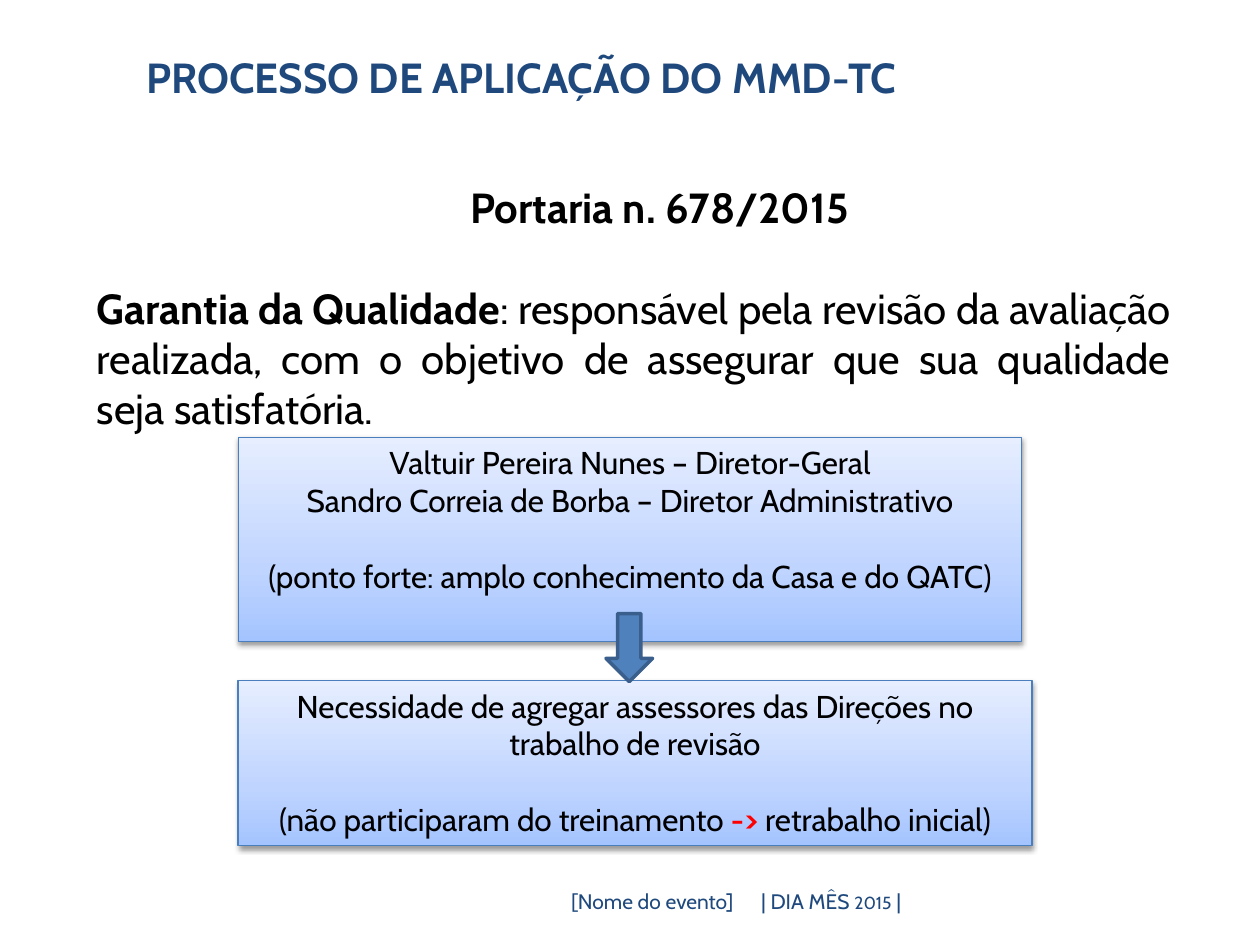
import pptx
import pptx.util
import pptx.dml.color
import pptx.enum.shapes
import pptx.enum.text
import pptx.oxml
import pptx.oxml.ns
from pptx.util import Inches

FONT = "Cabin"
COLORS = {
    "navy": "1F497D",
    "black": "000000",
    "red": "FF0000",
    "box_line": "4B7EBC",
    "arrow": "4F81BD",
    "arrow_line": "3A5F8C",
}
GRADIENT = [(0, "A4C4FF"), (35, "BFD4FF"), (100, "E6EEFF")]
ALIGN = pptx.enum.text.PP_ALIGN
SHAPES = pptx.enum.shapes.MSO_SHAPE
NS = pptx.oxml.ns.nsdecls("a")


def rgb(name):
    return pptx.dml.color.RGBColor.from_string(COLORS[name])


def write(frame, paragraphs, size, color, align, bold=False, gap=0):
    frame.word_wrap = True
    for i, runs in enumerate(paragraphs):
        paragraph = frame.paragraphs[0] if i == 0 else frame.add_paragraph()
        paragraph.alignment = align
        if gap and i == len(paragraphs) - 1:
            paragraph.space_before = pptx.util.Pt(gap)
        paragraph.font.name = FONT
        paragraph.font.size = pptx.util.Pt(size)
        paragraph.font.bold = bold
        paragraph.font.color.rgb = rgb(color)
        for text in runs:
            paragraph.add_run().text = text


deck = pptx.Presentation()
deck.slide_width, deck.slide_height = Inches(10), Inches(7.5)
slide = deck.slides.add_slide(deck.slide_layouts[6])

footers = [
    (5.67, 1.58, ["| DIA MÊS ", "2015", " |"]),
    (0.75, 5.17, ["[Nome do evento]"]),
]
for left, width, runs in footers:
    footer = slide.shapes.add_textbox(Inches(left), Inches(7), Inches(width), Inches(0.3)).text_frame
    footer.vertical_anchor = pptx.enum.text.MSO_ANCHOR.MIDDLE
    write(footer, [runs], 12, "navy", ALIGN.RIGHT)
    if len(runs) > 1:
        footer.paragraphs[0].runs[1].font.size = pptx.util.Pt(10)

ordinance = slide.shapes.add_textbox(Inches(0.67), Inches(1.39), Inches(9.13), Inches(2.1)).text_frame
write(
    ordinance,
    [
        ["Portaria n. 678/2015"],
        [
            "Garantia da Qualidade",
            ": responsável pela revisão da avaliação realizada, com o objetivo "
            "de assegurar que sua qualidade seja satisfatória.",
        ],
    ],
    24, "black", ALIGN.CENTER, bold=True, gap=28.8,
)
definition = ordinance.paragraphs[1]
definition.alignment = ALIGN.JUSTIFY
definition.runs[1].font.bold = False
definition._p.get_or_add_pPr().set("marR", str(Inches(0.41)))

title = slide.shapes.add_textbox(Inches(0.67), Inches(0.36), Inches(7.01), Inches(0.5)).text_frame
write(title, [["PROCESSO DE APLICAÇÃO DO MMD-TC "]], 24, "navy", ALIGN.CENTER, bold=True)

boxes = [
    (3.47, 6.22, 1.62, [
        ["Valtuir Pereira Nunes – Diretor-Geral"],
        ["Sandro Correia de Borba – Diretor Administrativo"],
        ["(ponto forte: amplo conhecimento da Casa e do QATC)"],
    ]),
    (5.4, 6.3, 1.31, [
        ["Necessidade de agregar assessores das Direções no trabalho de revisão"],
        ["(não participaram do treinamento ", "-> ", "retrabalho inicial)"],
    ]),
]
for top, width, height, paragraphs in boxes:
    box = slide.shapes.add_shape(SHAPES.RECTANGLE, Inches(1.89), Inches(top), Inches(width), Inches(height))
    box.shadow.inherit = False
    box.fill.gradient()
    box.fill.gradient_angle = 90
    stops = box._element.spPr.find(".//" + pptx.oxml.ns.qn("a:gsLst"))
    stops.clear()
    for position, shade in GRADIENT:
        stops.append(pptx.oxml.parse_xml(
            f'<a:gs {NS} pos="{position * 1000}"><a:srgbClr val="{shade}"/></a:gs>'))
    box.line.color.rgb = rgb("box_line")
    box.line.width = pptx.util.Pt(0.75)
    box._element.spPr.find(pptx.oxml.ns.qn("a:effectLst")).append(pptx.oxml.parse_xml(
        f'<a:outerShdw {NS} blurRad="{pptx.util.Pt(3.1)}" dist="{pptx.util.Pt(1.6)}" dir="5400000" '
        'rotWithShape="0"><a:srgbClr val="000000"><a:alpha val="38000"/></a:srgbClr></a:outerShdw>'))
    box.text_frame.vertical_anchor = pptx.enum.text.MSO_ANCHOR.TOP
    write(box.text_frame, paragraphs, 18, "black", ALIGN.CENTER, gap=21.6)

rework_mark = box.text_frame.paragraphs[-1].runs[1]
rework_mark.font.bold = True
rework_mark.font.color.rgb = rgb("red")

arrow = slide.shapes.add_shape(SHAPES.DOWN_ARROW, Inches(4.81), Inches(4.87), Inches(0.37), Inches(0.54))
arrow.shadow.inherit = False
arrow.fill.solid()
arrow.fill.fore_color.rgb = rgb("arrow")
arrow.line.color.rgb = rgb("arrow_line")
arrow.line.width = pptx.util.Pt(2)

deck.save("out.pptx")
